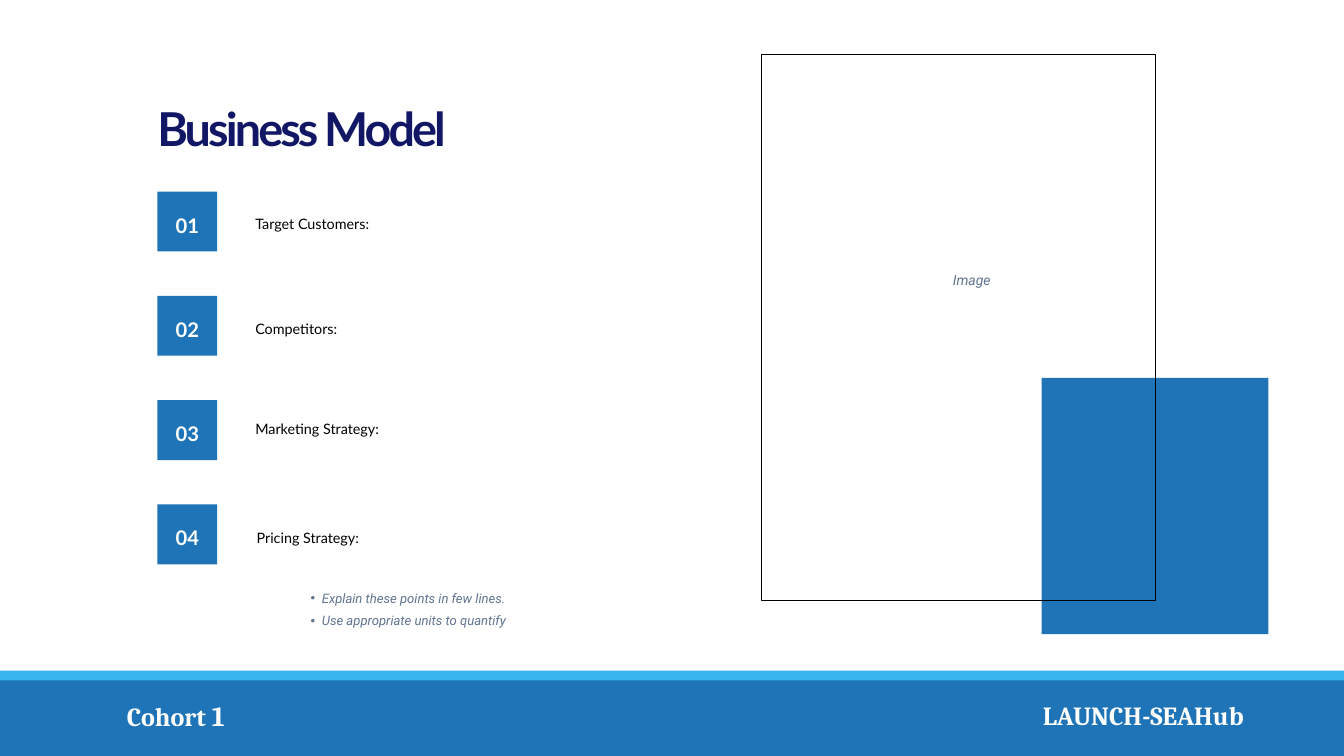
from lxml.etree import SubElement
from pptx import Presentation
from pptx.dml.color import RGBColor
from pptx.enum.shapes import MSO_SHAPE as Kind
from pptx.enum.text import PP_ALIGN as Align
from pptx.oxml.ns import qn
from pptx.util import Pt

BLUE = RGBColor(0x1E, 0x74, 0xB7)
SKY = RGBColor(0x38, 0xB5, 0xEC)
NAVY = RGBColor(0x11, 0x17, 0x65)
SLATE = RGBColor(0x60, 0x74, 0x90)
BLACK = RGBColor(0, 0, 0)
WHITE = RGBColor(0xFF, 0xFF, 0xFF)

ITEMS = [
    ("Target Customers:", 273.6, 222.5),
    ("Competitors:", 273.6, 335.5),
    ("Marketing Strategy:", 273.6, 442.1),
    ("Pricing Strategy:", 275, 559.4),
]
HINTS = ["Explain these points in few lines.", "Use appropriate units to quantify"]


def add_box(slide, left, top, width, height, fill=None, line=None):
    """Add a rectangle with a plain fill or a thin outline."""
    box = slide.shapes.add_shape(Kind.RECTANGLE, Pt(left), Pt(top), Pt(width), Pt(height))
    box.shadow.inherit = False
    if fill is None:
        box.fill.background()
    else:
        box.fill.solid()
        box.fill.fore_color.rgb = fill
    if line is None:
        box.line.fill.background()
    else:
        box.line.color.rgb = line
        box.line.width = Pt(1)


def style_run(run, face, size, color, bold=False, italic=False):
    """Set the font of one run."""
    font = run.font
    font.name, font.size = face, Pt(size)
    font.bold, font.italic = bold, italic
    font.color.rgb = color


def add_text(slide, left, top, width, height, text, face, size, color, pitch,
             align=Align.LEFT, **looks):
    """Add a text box without insets and return its paragraphs."""
    box = slide.shapes.add_textbox(Pt(left), Pt(top), Pt(width), Pt(height))
    frame = box.text_frame
    frame.word_wrap = True
    frame.margin_left = frame.margin_right = frame.margin_top = frame.margin_bottom = 0
    frame.text = text
    for para in frame.paragraphs:
        para.alignment = align
        para.line_spacing = Pt(pitch)
        for run in para.runs:
            style_run(run, face, size, color, **looks)
    return frame.paragraphs


def indent(para, margin, first=0, bullet=None):
    """Indent a second-level paragraph and give it a bullet if asked."""
    para.level = 1
    props = para._p.get_or_add_pPr()
    props.set("marL", str(Pt(margin)))
    props.set("indent", str(Pt(first)))
    if bullet:
        SubElement(props, qn("a:buFont"), typeface="Arial")
        SubElement(props, qn("a:buChar"), char=bullet)


def add_footer(slide):
    """Add the two footer bands and their labels."""
    add_box(slide, -3.6, 718.6, 1443.6, 91.4, SKY)
    add_box(slide, -3.6, 728.9, 1443.6, 81.1, BLUE)
    para = add_text(slide, 136, 751.7, 172, 34, "Cohort", "Cambria", 28, WHITE, 33,
                    bold=True)[0]
    run = para.add_run()
    run.text = " 1"
    style_run(run, "Cambria", 30, WHITE, bold=True)
    add_text(slide, 1117.4, 749.5, 278.6, 34, "LAUNCH-SEAHub", "Cambria", 28, WHITE, 33,
             bold=True)


def add_item(slide, index, label, left, top):
    """Add a numbered square and the label beside it."""
    step = 111.75 * index
    add_box(slide, 168.5, 205.2 + step, 64.2, 64.2, BLUE)
    add_text(slide, 177.8, 217.2 + step, 46, 33, f"{index + 1:02}", "Lato", 21.6, WHITE,
             36.8, Align.CENTER, bold=True)
    add_text(slide, left, top, 390, 24, label, "Lato", 15.4, BLACK, 26.1)


def main():
    """Build the business model slide."""
    deck = Presentation()
    deck.slide_width, deck.slide_height = Pt(1440), Pt(810)
    slide = deck.slides.add_slide(deck.slide_layouts[6])
    add_footer(slide)
    add_box(slide, 1116, 405, 243, 274.5, BLUE)
    add_box(slide, 816, 58.5, 422, 585, line=BLACK)
    title = add_text(slide, 168.5, 107.3, 420, 60, "Business Model", "Lato", 50, NAVY, 60,
                     bold=True)[0]
    title.runs[0].font._element.set("spc", "-310")
    for index, (label, left, top) in enumerate(ITEMS):
        add_item(slide, index, label, left, top)
    hints = add_text(slide, 321, 625.7, 355, 45, "\n".join(HINTS), "Roboto", 14, SLATE,
                     23.8, italic=True)
    for para in hints:
        indent(para, 23.8, -12, "•")
    image = add_text(slide, 1008, 283.7, 86, 25, "Image", "Roboto", 15, SLATE, 25.5,
                     italic=True)[0]
    indent(image, 13)
    deck.save("out.pptx")


if __name__ == "__main__":
    main()
